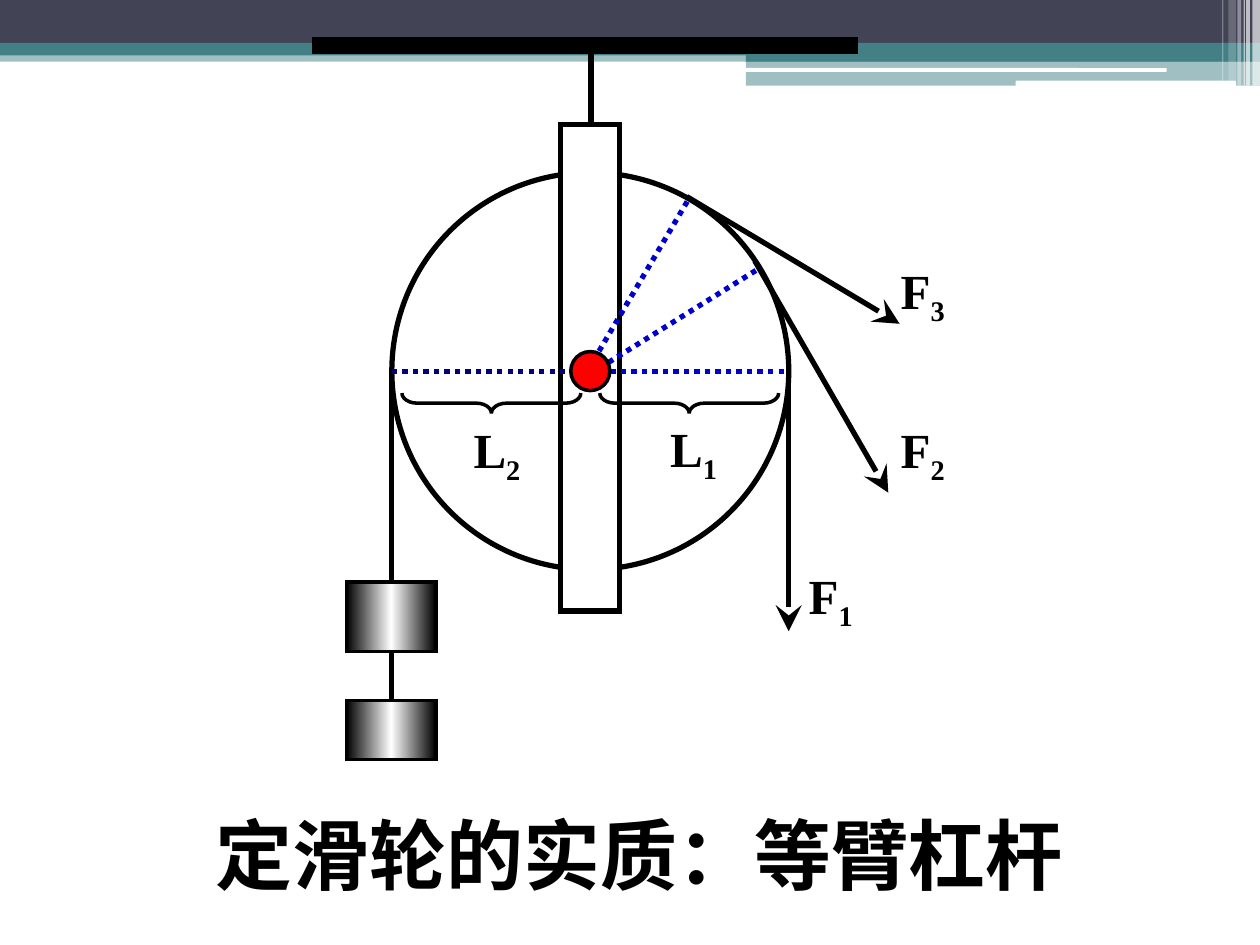
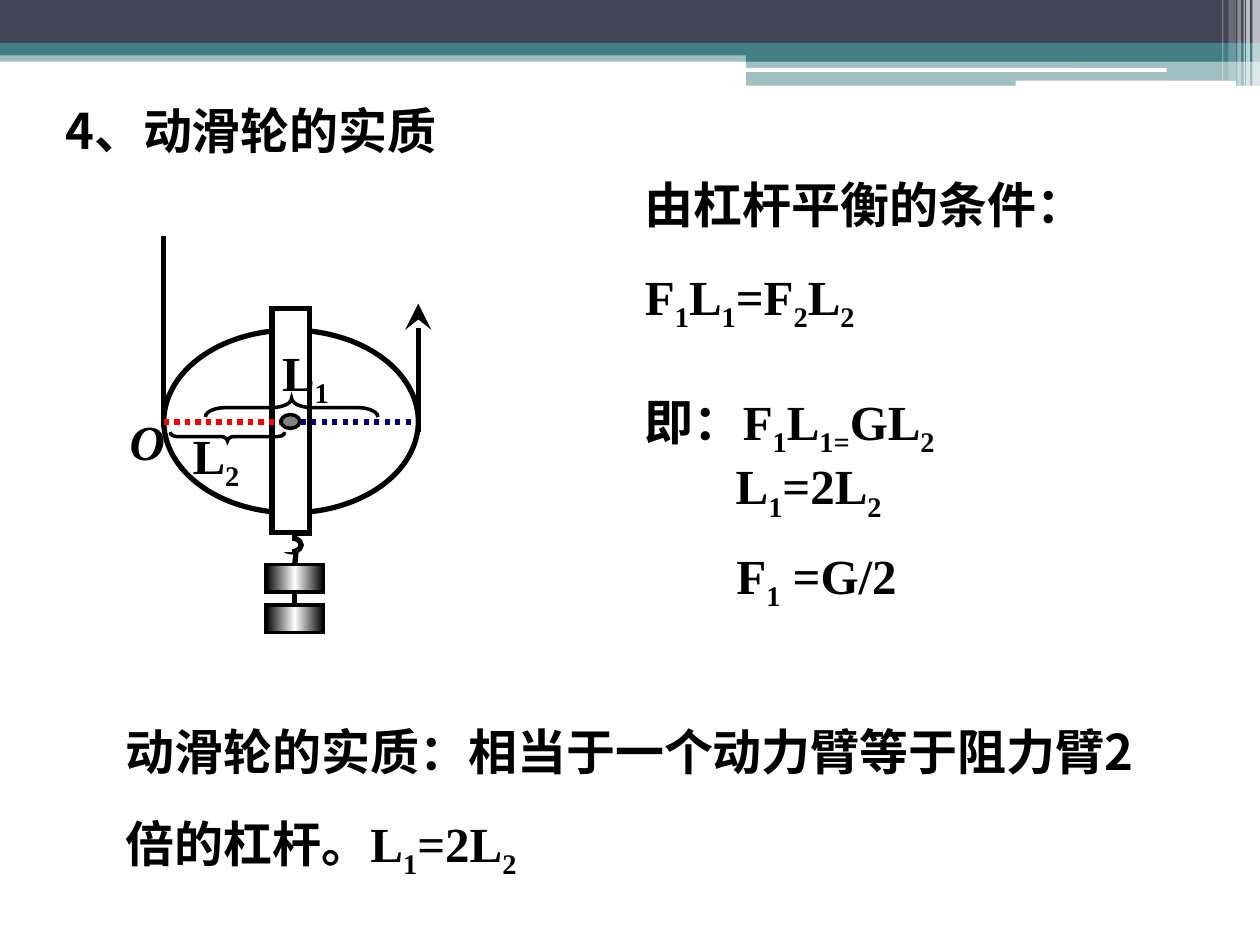
"""Build two slides on the lever principle behind fixed and movable pulleys."""
from copy import deepcopy

from lxml import etree
from pptx import Presentation
from pptx.dml.color import RGBColor
from pptx.enum.dml import MSO_LINE
from pptx.enum.shapes import MSO_CONNECTOR, MSO_SHAPE
from pptx.enum.text import MSO_AUTO_SIZE, PP_ALIGN
from pptx.oxml.ns import qn
from pptx.util import Inches, Pt

RECT = MSO_SHAPE.RECTANGLE
ROUND = MSO_SHAPE.ROUNDED_RECTANGLE
OVAL = MSO_SHAPE.OVAL
BRACE = MSO_SHAPE.RIGHT_BRACE
STRAIGHT = MSO_CONNECTOR.STRAIGHT
DOTS = MSO_LINE.ROUND_DOT
FIT = MSO_AUTO_SIZE.SHAPE_TO_FIT_TEXT
CENTER = PP_ALIGN.CENTER
TOP, BOTTOM = 0, 2

SERIF, HAN, SANS = "Times New Roman", "Noto Sans CJK SC", "Arial"
COLORS = {
    "black": "000000", "white": "FFFFFF", "slate": "424456", "teal": "438086",
    "red": "FF0000", "navy": "000080", "blue": "0000CC", "gray": "808080",
}
BANDS = [
    (0, 0.4, 10, 0.09, "teal", 50),
    (0, 0, 10, 0.34, "slate", 100),
    (0, 0.34, 10, 0.1, "teal", 100),
    (5.92, 0.39, 4.08, 0.1, "teal", 100),
    (5.92, 0.48, 4.08, 0.2, "teal", 50),
]
BARS = [(5.91, 0.54, 3.35, 0.03), (8.06, 0.64, 1.75, 0.05)]
STRIPES = [
    (9.94, 0.06, 0.68, 65), (9.89, 0.03, 0.68, 65), (9.87, 0.01, 0.68, 60),
    (9.82, 0.03, 0.68, 40), (9.75, 0.06, 0.64, 20), (9.7, 0.01, 0.64, 30),
]


def rgb(name):
    return RGBColor.from_string(COLORS[name])


class Deck:
    def __init__(self):
        self.prs = Presentation()
        self.prs.slide_width = Inches(10)
        self.prs.slide_height = Inches(7.5)
        self.shapes = None

    def start(self):
        slide = self.prs.slides.add_slide(self.prs.slide_layouts[6])
        self.shapes = slide.shapes
        for *box, color, alpha in BANDS:
            self.shape(RECT, *box, fill=color, alpha=alpha, line=None)
        for box in BARS:
            self.shape(ROUND, *box, line=None)
        for x, w, h, alpha in STRIPES:
            self.shape(RECT, x, 0, w, h, alpha=alpha, line=None)

    def shape(self, kind, x, y, w, h, fill="white", alpha=100, line="black", width=3):
        item = self.shapes.add_shape(kind, Inches(x), Inches(y), Inches(w), Inches(h))
        item.shadow.inherit = False
        props = item._element.spPr
        if fill:
            item.fill.solid()
            item.fill.fore_color.rgb = rgb(fill)
        else:
            item.fill.background()
        if alpha < 100:
            tone = props.find(qn("a:solidFill"))[0]
            etree.SubElement(tone, qn("a:alpha"), val=str(alpha * 1000))
        if line:
            item.line.color.rgb = rgb(line)
            item.line.width = Pt(width)
            etree.SubElement(props.find(qn("a:ln")), qn("a:miter"), lim="800000")
        else:
            item.line.fill.background()
        return item

    def weight(self, x, y, w, h):
        item = self.shape(RECT, x, y, w, h, width=2)
        item.fill.gradient()
        item.fill.gradient_angle = 0
        stops = item._element.spPr.find(qn("a:gradFill")).find(qn("a:gsLst"))
        stops.append(deepcopy(stops[0]))
        for stop, place, color in zip(item.fill.gradient_stops, (0, 0.5, 1),
                                      ("black", "white", "black")):
            stop.position = place
            stop.color.rgb = rgb(color)
        return item

    def brace(self, x, y, w, h, turn=90, curl=0.756):
        item = self.shape(BRACE, x, y, w, h, fill=None, width=2)
        item.rotation = turn
        item.adjustments[0] = curl
        item.adjustments[1] = 0.5

    def line(self, x1, y1, x2, y2, color="black", width=3, dots=False, arrow=False):
        item = self.shapes.add_connector(
            STRAIGHT, Inches(x1), Inches(y1), Inches(x2), Inches(y2))
        item.line.color.rgb = rgb(color)
        item.line.width = Pt(width)
        if dots:
            item.line.dash_style = DOTS
        props = item._element.spPr
        if arrow:
            etree.SubElement(props.find(qn("a:ln")), qn("a:tailEnd"),
                             type="stealth", w="lg", len="lg")
        etree.SubElement(props, qn("a:effectLst"))
        return item

    def text(self, x, y, w, h, *paras, font=SERIF, size=28, italic=False,
             wrap=True, align=None, space=None):
        """Add paragraphs of text or (text, font) parts, with subscripts between tildes."""
        box = self.shapes.add_textbox(Inches(x), Inches(y), Inches(w), Inches(h))
        frame = box.text_frame
        frame.word_wrap = wrap
        frame.auto_size = FIT
        for i, para in enumerate(paras):
            p = frame.add_paragraph() if i else frame.paragraphs[0]
            p.alignment = align
            p.line_spacing = space
            if i:
                p.space_before = Pt(size / 2)
            parts = [(para, font)] if isinstance(para, str) else para
            for words, face in parts:
                for n, piece in enumerate(words.split("~")):
                    if piece:
                        self.run(p, piece, face, size, italic, n % 2)

    def run(self, p, words, face, size, italic, low):
        run = p.add_run()
        run.text = words
        run.font.size = Pt(size)
        run.font.bold = True
        run.font.italic = italic
        run.font.color.rgb = rgb("black")
        run.font.name = face
        props = run._r.get_or_add_rPr()
        etree.SubElement(props, qn("a:ea"), typeface=HAN)
        if low:
            props.set("baseline", "-25000")


def fixed(deck):
    deck.start()
    deck.line(4.69, 0.36, 4.69, 1.15)
    deck.shape(OVAL, 3.11, 1.37, 3.15, 3.15)
    deck.shape(RECT, 4.45, 0.99, 0.47, 3.86)
    deck.line(2.48, 0.36, 6.81, 0.36, width=10)
    deck.line(3.11, 2.96, 3.11, 4.7)
    deck.line(3.11, 4.77, 3.11, 5.76)
    deck.weight(2.75, 4.62, 0.71, 0.55)
    deck.weight(2.75, 5.56, 0.71, 0.47)
    deck.line(3.11, 2.95, 4.61, 2.95, color="navy", dots=True)
    deck.line(4.76, 2.95, 6.26, 2.95, color="blue", dots=True)
    deck.line(6.26, 2.89, 6.26, 5.01, arrow=True)
    deck.line(5.99, 2.07, 7.05, 3.91, arrow=True)
    deck.line(4.76, 2.92, 6.01, 2.14, color="blue", dots=True)
    deck.line(4.67, 2.93, 5.46, 1.59, color="blue", dots=True)
    deck.shape(OVAL, 4.53, 2.79, 0.31, 0.31, fill="red", width=2)
    deck.line(5.45, 1.56, 7.14, 2.57, arrow=True)
    for x in (3.82, 5.39):
        deck.brace(x, 2.49, 0.16, 1.42)
    for x, y, label in [(5.22, 3.27, "L~1~"), (3.66, 3.28, "L~2~"), (6.32, 4.44, "F~1~"),
                        (7.05, 3.28, "F~2~"), (7.05, 2.02, "F~3~")]:
        deck.text(x, y, 0.65, 0.57, label)
    deck.text(1.61, 6.36, 6.94, 0.83, "定滑轮的实质：等臂杠杆", font=SANS, size=44, wrap=False)


def moving(deck):
    deck.start()
    deck.text(0.42, 0.75, 3.66, 0.6, "4、动滑轮的实质", font=HAN)
    deck.text(5.02, 1.1, 3.75, 2.46,
              [("由杠杆平衡的条件：", HAN), ("F~1~L~1~=F~2~L~2~", SERIF)],
              [("即", HAN), ("：F~1~L~1=~GL~2~", SERIF)], space=1.5)
    deck.text(5.44, 4.28, 2.08, 0.57, "F~1~ =G/2", align=CENTER)
    deck.text(5.74, 3.57, 2, 0.57, "L~1~=2L~2~")
    deck.text(0.9, 5.44, 8.58, 1.43,
              [("动滑轮的实质：相当于一个动力臂等于阻力臂2倍的杠杆。", HAN),
               ("L~1~=2L~2~", SERIF)], space=1.5)

    deck.shape(OVAL, 1.3, 2.62, 2.02, 1.45)
    frame = deck.shape(RECT, 2.16, 2.45, 0.3, 1.78)
    deck.line(2.34, 4.51, 2.34, 4.97)
    upper = deck.weight(2.11, 4.48, 0.46, 0.22)
    deck.weight(2.11, 4.8, 0.46, 0.22)
    deck.brace(1.77, 3.01, 0.07, 0.91)
    deck.brace(2.24, 2.55, 0.15, 1.37, turn=270, curl=1.064)
    deck.text(2.14, 2.67, 0.65, 0.57, "L~1~")
    deck.text(1.43, 3.33, 0.65, 0.57, "L~2~")
    deck.line(1.3, 3.35, 3.32, 3.35, color="navy", dots=True)
    stem = deck.line(2.31, 4.22, 2.31, 4.33)
    stem.begin_connect(frame, BOTTOM)
    deck.shape(OVAL, 2.24, 4.27, 0.15, 0.11)
    deck.shape(RECT, 2.1, 4.27, 0.2, 0.09, line="white")
    hook = deck.line(2.35, 4.37, 2.35, 4.48)
    hook.end_connect(upper, TOP)
    deck.line(1.3, 1.87, 1.3, 3.39)
    deck.line(3.32, 3.43, 3.32, 2.41, arrow=True)
    deck.text(0.93, 3.22, 0.51, 0.57, "O", italic=True)
    deck.line(1.3, 3.35, 2.31, 3.35, color="red", dots=True)
    deck.shape(OVAL, 2.23, 3.29, 0.15, 0.11, fill="gray", width=2)


def main():
    deck = Deck()
    fixed(deck)
    moving(deck)
    deck.prs.save("out.pptx")


if __name__ == "__main__":
    main()
